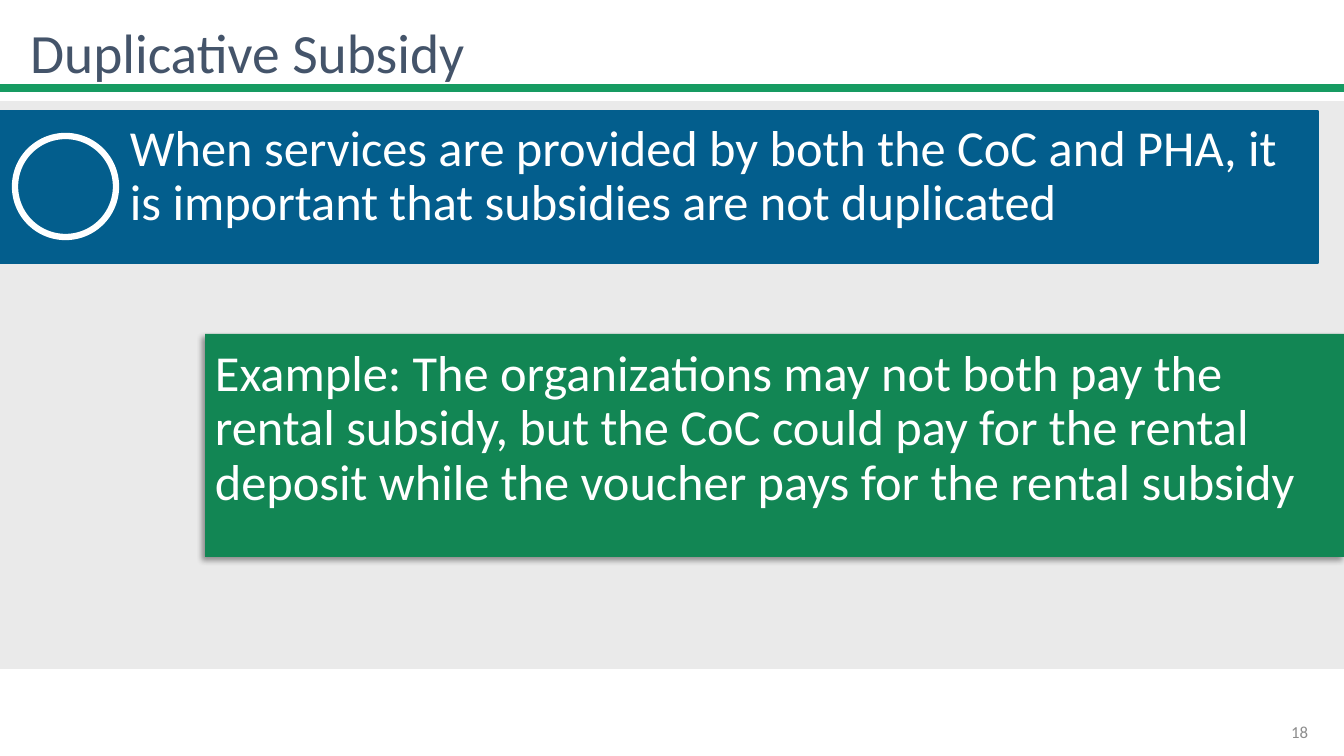
import dataclasses

import lxml.etree
import pptx
import pptx.dml.color
import pptx.enum.shapes
import pptx.enum.text
import pptx.oxml.ns
import pptx.util

SHAPE = pptx.enum.shapes.MSO_SHAPE
ALIGN = pptx.enum.text.PP_ALIGN
ANCHOR = pptx.enum.text.MSO_ANCHOR
QN = pptx.oxml.ns.qn


@dataclasses.dataclass(frozen=True)
class Theme:
    """Colours, font and type sizes of the slide."""
    font: str = "Calibri"
    white: str = "FFFFFF"
    slate: str = "44546A"
    gray: str = "8C8C8C"
    pale: str = "EAEAEA"
    blue: str = "035E8D"
    green: str = "128654"
    rule: str = "169B62"
    black: str = "000000"
    head: float = 39.6
    body: float = 36
    foot: float = 12


THEME = Theme()


def px(count):
    """Turn whole pixels into EMU."""
    return pptx.util.Emu(round(count * 9144000 / 1008))


def tint(code):
    """Return the colour for a hex code."""
    return pptx.dml.color.RGBColor.from_string(code)


def place(item, box):
    """Move an item into a pixel box."""
    item.left, item.top, item.width, item.height = map(px, box)


def write(item, text, size, color, align=ALIGN.LEFT, anchor=ANCHOR.TOP, lead=0.9):
    """Put one formatted run into an item."""
    frame = item.text_frame
    frame.word_wrap = True
    frame.auto_size = pptx.enum.text.MSO_AUTO_SIZE.NONE
    frame.vertical_anchor = anchor
    para = frame.paragraphs[0]
    para.alignment = align
    para.line_spacing = lead
    run = para.add_run()
    run.text = text
    run.font.name = THEME.font
    run.font.size = pptx.util.Pt(size)
    run.font.color.rgb = tint(color)


def draw(slide, kind, box, fill=None, line=None, width=1):
    """Add a flat shape with an optional fill and line."""
    shape = slide.shapes.add_shape(kind, *map(px, box))
    shape.shadow.inherit = False
    if fill:
        shape.fill.solid()
        shape.fill.fore_color.rgb = tint(fill)
    else:
        shape.fill.background()
    if line:
        shape.line.color.rgb = tint(line)
        shape.line.width = pptx.util.Pt(width)
    else:
        shape.line.fill.background()
    return shape


def cast(shape):
    """Give a shape a soft shadow to its lower left."""
    effects = shape.element.spPr.find(QN("a:effectLst"))
    shade = lxml.etree.SubElement(
        effects, QN("a:outerShdw"), blurRad=str(pptx.util.Pt(4)),
        dist=str(pptx.util.Pt(3)), dir=str(135 * 60000), rotWithShape="0")
    color = lxml.etree.SubElement(shade, QN("a:srgbClr"), val=THEME.black)
    lxml.etree.SubElement(color, QN("a:alpha"), val="40000")


def header(slide, box):
    """Place the title above a rule along the foot of the box."""
    left, top, width, height = box
    base = top + height
    rule = slide.shapes.add_connector(
        pptx.enum.shapes.MSO_CONNECTOR.STRAIGHT,
        px(left), px(base), px(left + width), px(base))
    rule.line.color.rgb = tint(THEME.rule)
    rule.line.width = pptx.util.Pt(6)
    lxml.etree.SubElement(rule.element.spPr, QN("a:effectLst"))
    title = slide.shapes.title
    place(title, (left + 20, base - 67, 983, 70))
    write(title, "Duplicative Subsidy", THEME.head, THEME.slate,
          anchor=ANCHOR.MIDDLE)


def banner(slide, box):
    """Place the blue band with its ring and main statement."""
    left, top, width, height = box
    draw(slide, SHAPE.RECTANGLE, box, THEME.blue, THEME.blue)
    note = slide.shapes.add_textbox(
        *map(px, (left + 120, top + 7, width - 120, height - 7)))
    write(note, "When services are provided by both the CoC and PHA, it is "
          "important that subsidies are not duplicated", THEME.body, THEME.white)
    draw(slide, SHAPE.OVAL, (left + 15, top + 25, 101, 101),
         line=THEME.white, width=4.5)


def sample(slide, box):
    """Place the green example panel."""
    panel = draw(slide, SHAPE.RECTANGLE, box, THEME.green)
    cast(panel)
    panel.text_frame.margin_top = px(14)
    write(panel, "Example: The organizations may not both pay the rental subsidy, "
          "but the CoC could pay for the rental deposit while the voucher pays "
          "for the rental subsidy", THEME.body, THEME.white)


def footer(slide, box):
    """Place the page number at the right of the box."""
    number = slide.shapes.add_textbox(*map(px, box))
    write(number, "18", THEME.foot, THEME.gray, ALIGN.RIGHT, ANCHOR.MIDDLE, 1.0)


def main():
    """Build and save the slide."""
    deck = pptx.Presentation()
    deck.slide_width, deck.slide_height = px(1344), px(756)
    slide = deck.slides.add_slide(deck.slide_layouts.get_by_name("Title Only"))
    header(slide, (0, 0, 1344, 88))
    draw(slide, SHAPE.RECTANGLE, (0, 102, 1344, 566), THEME.pale, THEME.pale)
    banner(slide, (0, 111, 1318, 152))
    sample(slide, (205, 334, 1139, 223))
    footer(slide, (1016, 712, 302, 40))
    deck.save("out.pptx")


if __name__ == "__main__":
    main()
